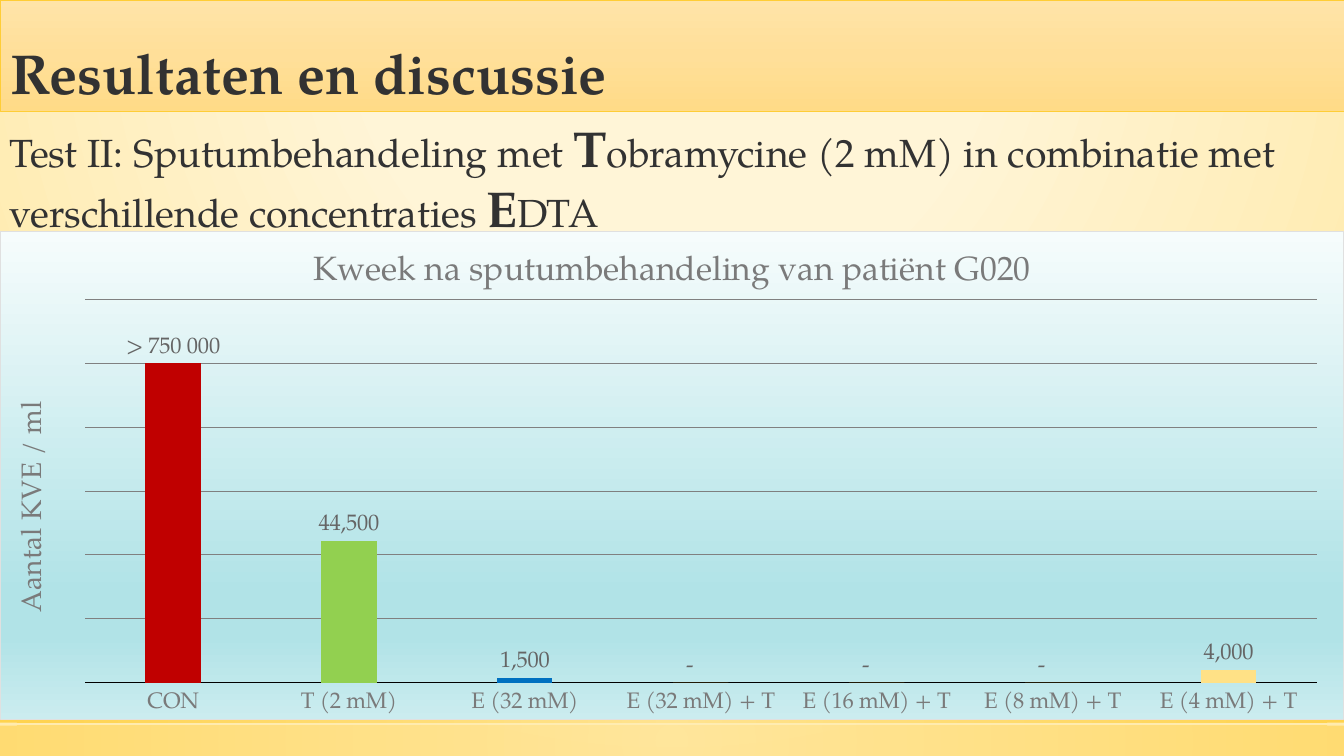
from lxml import etree
from pptx import Presentation
from pptx.chart.data import CategoryChartData
from pptx.dml.color import RGBColor
from pptx.enum.chart import XL_CHART_TYPE as ChartType
from pptx.enum.chart import XL_LABEL_POSITION as LabelPosition
from pptx.enum.chart import XL_TICK_LABEL_POSITION as TickLabelPosition
from pptx.enum.chart import XL_TICK_MARK as TickMark
from pptx.enum.shapes import MSO_SHAPE as Preset
from pptx.enum.text import MSO_ANCHOR as Anchor
from pptx.enum.text import MSO_AUTO_SIZE as AutoSize
from pptx.enum.text import PP_ALIGN as Align
from pptx.oxml import parse_xml
from pptx.oxml.ns import nsdecls, qn
from pptx.util import Inches, Pt

FONT = "TeX Gyre Pagella"
DARK = RGBColor(0x32, 0x32, 0x32)
AXIS_GREY = RGBColor(0x7A, 0x7A, 0x7A)
LABEL_GREY = RGBColor(0x65, 0x65, 0x65)
GRID_GREY = RGBColor(0x80, 0x80, 0x80)
BORDER_GREY = RGBColor(0xE0, 0xE0, 0xE0)
BLACK = RGBColor(0, 0, 0)
GOLD = RGBColor(0xFF, 0xCD, 0x36)
PALE_GOLD = RGBColor(0xFF, 0xE1, 0x86)
CREAM = RGBColor(0xFF, 0xF5, 0xD7)
SAND = RGBColor(0xFF, 0xEB, 0xAF)
TITLE_TOP = RGBColor(0xFF, 0xE4, 0xA8)
TITLE_MIDDLE = RGBColor(0xFF, 0xDF, 0x99)
TITLE_BOTTOM = RGBColor(0xFF, 0xDB, 0x87)
ICE = RGBColor(0xF6, 0xFC, 0xFC)
AQUA = RGBColor(0xB1, 0xE3, 0xE7)
LIGHT_AQUA = RGBColor(0xCB, 0xEC, 0xEF)
RED = RGBColor(0xC0, 0, 0)
GREEN = RGBColor(0x92, 0xD0, 0x50)
BLUE = RGBColor(0, 0x70, 0xC0)

DOWNWARD = '<a:lin ang="5400000" scaled="0"/>'
COUNT_FORMAT = '_ * #,##0_ ;_ * \\-#,##0_ ;_ * "-"??_ ;_ '
COUNTS = {
    "CON": 100000,
    "T (2 mM)": 44500,
    "E (32 mM)": 1500,
    "E (32 mM) + T": 0,
    "E (16 mM) + T": 0,
    "E (8 mM) + T": 0,
    "E (4 mM) + T": 4000,
}
BAR_COLOURS = {0: RED, 1: GREEN, 2: BLUE, 6: PALE_GOLD}


def circular(left, top, right, bottom):
    return (f'<a:path path="circle"><a:fillToRect l="{left * 1000}" t="{top * 1000}" '
            f'r="{right * 1000}" b="{bottom * 1000}"/></a:path>')


def set_gradient(fill, properties, stops, direction):
    fill.solid()
    stop_xml = "".join(
        f'<a:gs pos="{position * 1000}"><a:srgbClr val="{colour}">'
        f'<a:alpha val="{opacity * 1000}"/></a:srgbClr></a:gs>'
        for position, colour, opacity in stops)
    gradient = parse_xml(f'<a:gradFill {nsdecls("a")} rotWithShape="1">'
                         f'<a:gsLst>{stop_xml}</a:gsLst>{direction}</a:gradFill>')
    solid = properties.find(qn("a:solidFill"))
    properties.replace(solid, gradient)


def style_font(font, size, colour, bold=False):
    font.name = FONT
    font.size = Pt(size)
    font.bold = bold
    font.color.rgb = colour


def paint_background(slide):
    fill = slide.background.fill
    properties = slide.element.find(".//" + qn("p:bgPr"))
    set_gradient(fill, properties, [(0, CREAM, 59), (40, CREAM, 66), (100, SAND, 100)],
                 circular(50, -80, 50, 180))


def add_band(slide, top, height, opacity):
    band = slide.shapes.add_shape(Preset.RECTANGLE, 0, Inches(top), Inches(13.33), Inches(height))
    band.shadow.inherit = False
    band.line.fill.background()
    set_gradient(band.fill, band.element.spPr, [(0, PALE_GOLD, opacity), (100, GOLD, opacity)],
                 circular(50, 50, 50, 50))


def place_title(slide, wording):
    title = slide.shapes.title
    title.left, title.top = 0, 0
    title.width, title.height = Inches(13.33), Inches(1.11)
    set_gradient(title.fill, title.element.spPr,
                 [(0, TITLE_TOP, 100), (50, TITLE_MIDDLE, 100), (100, TITLE_BOTTOM, 100)], DOWNWARD)
    title.line.color.rgb = GOLD
    title.line.width = Pt(0.5)
    frame = title.text_frame
    frame.text = wording
    frame.vertical_anchor = Anchor.BOTTOM
    heading = frame.paragraphs[0]
    heading.alignment = Align.LEFT
    heading.line_spacing = 0.9
    style_font(heading.runs[0].font, 40, DARK, True)


def add_subtitle(slide, pieces):
    subtitle = slide.shapes.add_textbox(0, Inches(1.11), Inches(12.78), Inches(1.31))
    frame = subtitle.text_frame
    frame.word_wrap = True
    frame.auto_size = AutoSize.SHAPE_TO_FIT_TEXT
    for wording, initial in pieces:
        run = frame.paragraphs[0].add_run()
        run.text = wording
        style_font(run.font, 36 if initial else 28, DARK, initial)


def set_chart_text(owner, wording, size, colour):
    owner.text_frame.text = wording
    style_font(owner.text_frame.paragraphs[0].runs[0].font, size, colour)


def style_axes(chart):
    categories = chart.category_axis
    categories.major_tick_mark = TickMark.NONE
    categories.tick_label_position = TickLabelPosition.LOW
    categories.format.line.color.rgb = BLACK
    categories.format.line.width = Pt(0.75)
    style_font(categories.tick_labels.font, 16, AXIS_GREY)

    counts = chart.value_axis
    counts.minimum_scale, counts.maximum_scale, counts.major_unit = 0, 120000, 20000
    counts.tick_labels.number_format = COUNT_FORMAT
    counts.tick_labels.number_format_is_linked = False
    counts.major_gridlines.format.line.color.rgb = GRID_GREY
    counts.major_gridlines.format.line.width = Pt(0.75)
    set_chart_text(counts.axis_title, "Aantal KVE / ml", 20, AXIS_GREY)
    counts.visible = False


def style_bars(plot):
    plot.gap_width, plot.overlap = 219, -27
    plot.vary_by_categories = False
    bars = plot.series[0]
    bars.format.fill.solid()
    bars.format.fill.fore_color.rgb = GOLD
    for index, colour in BAR_COLOURS.items():
        fill = bars.points[index].format.fill
        fill.solid()
        fill.fore_color.rgb = colour
    labels = bars.data_labels
    labels.show_value = True
    labels.position = LabelPosition.OUTSIDE_END
    labels.number_format = COUNT_FORMAT
    labels.number_format_is_linked = False
    style_font(labels.font, 16, LABEL_GREY)
    control = bars.points[0].data_label
    set_chart_text(control, "> 750 000", 16, LABEL_GREY)
    control.position = LabelPosition.OUTSIDE_END


def frame_chart(chart):
    space = chart.element
    properties = parse_xml(
        f'<c:spPr {nsdecls("c", "a")}><a:solidFill/><a:ln w="{Pt(0.75)}"><a:solidFill>'
        f'<a:srgbClr val="{BORDER_GREY}"/></a:solidFill></a:ln></c:spPr>')
    space.find(qn("c:chart")).addnext(properties)
    backdrop = chart.plots[0].series[0].format.fill.from_fill_parent(properties)
    set_gradient(backdrop, properties,
                 [(0, ICE, 100), (74, AQUA, 100), (83, AQUA, 100), (100, LIGHT_AQUA, 100)], DOWNWARD)


def place_plot(chart, **fractions):
    area = chart.element.find(".//" + qn("c:plotArea"))
    for old in area.findall(qn("c:layout")):
        area.remove(old)
    layout = etree.Element(qn("c:layout"))
    manual = etree.SubElement(layout, qn("c:manualLayout"))
    settings = {"layoutTarget": "inner", "xMode": "edge", "yMode": "edge", **fractions}
    for name, value in settings.items():
        etree.SubElement(manual, qn(f"c:{name}")).set("val", str(value))
    area.insert(0, layout)


def add_culture_chart(slide):
    data = CategoryChartData()
    data.categories = list(COUNTS)
    data.add_series("Series 1", list(COUNTS.values()))
    chart = slide.shapes.add_chart(ChartType.COLUMN_CLUSTERED, 0, Inches(2.29),
                                   Inches(13.33), Inches(4.85), data).chart
    chart.has_legend = False
    style_font(chart.font, 16, DARK)
    set_chart_text(chart.chart_title, "Kweek na sputumbehandeling van patiënt G020", 24, AXIS_GREY)
    style_axes(chart)
    style_bars(chart.plots[0])
    frame_chart(chart)
    place_plot(chart, x=0.063, y=0.14, w=0.917, h=0.785)


def main():
    deck = Presentation()
    deck.slide_width, deck.slide_height = Inches(13.33), Inches(7.5)
    slide = deck.slides.add_slide(deck.slide_layouts[5])
    paint_background(slide)
    add_band(slide, 7.2, 0.3, 50)
    add_band(slide, 7.09, 0.08, 80)
    place_title(slide, "Resultaten en discussie")
    add_subtitle(slide, [
        ("Test II: Sputumbehandeling met ", False), ("T", True),
        ("obramycine (2 mM) in combinatie met verschillende concentraties ", False),
        ("E", True), ("DTA", False)])
    add_culture_chart(slide)
    deck.save("out.pptx")


if __name__ == "__main__":
    main()
